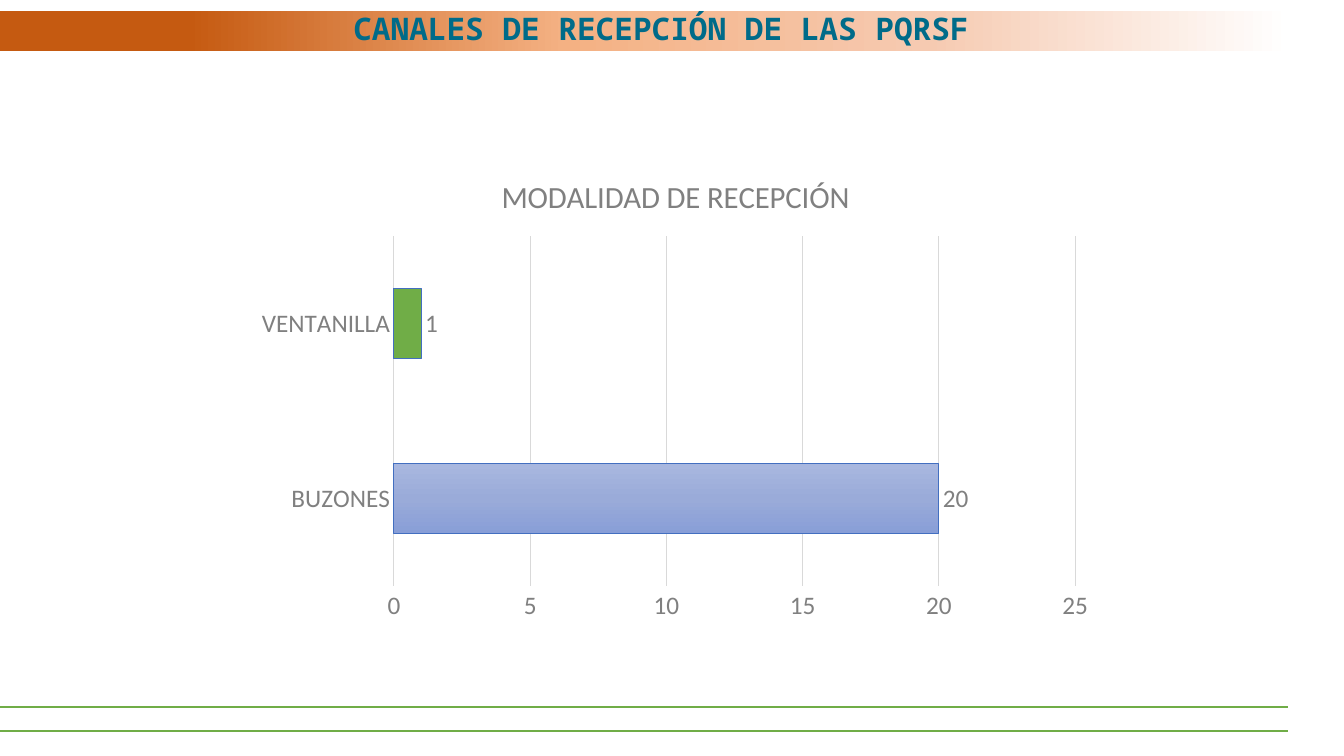
from typing import NamedTuple

from lxml import etree
from pptx import Presentation
from pptx import util as u
from pptx.chart import data as chart_data
from pptx.dml.color import RGBColor
from pptx.enum import chart as ch
from pptx.enum import shapes, text
from pptx.oxml import ns

GREEN, GREY, TEAL = "70AD47", "808080", "006B89"
GRID, BAR_EDGE = "D9D9D9", "436FC0"


class Stop(NamedTuple):
    percent: int
    color: str


class Rule(NamedTuple):
    y: float
    right: float = 12.77


BAND_STOPS = [Stop(14, "C55A11"), Stop(42, "F4B183"), Stop(69, "F6CAB1"), Stop(96, "FFFFFF")]
BAR_STOPS = [Stop(0, "A8B7DF"), Stop(50, "9AABD9"), Stop(100, "889ED7")]
FOOTER_RULES = [Rule(7.25), Rule(7.01)]
PLOT_AREA = {"x": 0.173, "y": 0.171, "w": 0.791, "h": 0.737}


def rgb(color: str) -> RGBColor:
    return RGBColor.from_string(color)


def style_font(font, size: float, color: str, name: str = "Calibri", bold: bool = False) -> None:
    font.size, font.name, font.bold = u.Pt(size), name, bold
    font.color.rgb = rgb(color)


def style_line(line, color: str, width: float) -> None:
    line.color.rgb = rgb(color)
    line.width = u.Pt(width)


def fill_gradient(fill, properties, stops: list[Stop], angle: int) -> None:
    fill.gradient()
    gradient = properties.find(ns.qn("a:gradFill"))
    for child in list(gradient):
        gradient.remove(child)
    stop_list = etree.SubElement(gradient, ns.qn("a:gsLst"))
    for stop in stops:
        entry = etree.SubElement(stop_list, ns.qn("a:gs"), pos=str(stop.percent * 1000))
        etree.SubElement(entry, ns.qn("a:srgbClr"), val=stop.color)
    etree.SubElement(gradient, ns.qn("a:lin"), ang=str(angle * 60000), scaled="0")


def draw_rule(slide, rule: Rule) -> None:
    line = slide.shapes.add_connector(
        shapes.MSO_CONNECTOR.STRAIGHT,
        u.Inches(rule.right), u.Inches(rule.y), u.Inches(0), u.Inches(rule.y),
    )
    style_line(line.line, GREEN, 1.5)
    etree.SubElement(line._element.spPr, ns.qn("a:effectLst"))


def draw_band(slide) -> None:
    band = slide.shapes.add_shape(
        shapes.MSO_SHAPE.RECTANGLE,
        u.Inches(0), u.Inches(0.11), u.Inches(13.33), u.Inches(0.4),
    )
    band.shadow.inherit = False
    band.line.fill.background()
    fill_gradient(band.fill, band._element.spPr, BAND_STOPS, 0)


def draw_heading(slide) -> None:
    heading = slide.shapes.add_textbox(
        u.Inches(0.42), u.Inches(0.11), u.Inches(12.46), u.Inches(0.4)
    )
    frame = heading.text_frame
    frame.word_wrap = True
    frame.vertical_anchor = text.MSO_ANCHOR.MIDDLE
    frame.text = "CANALES DE RECEPCIÓN DE LAS PQRSF "
    paragraph = frame.paragraphs[0]
    paragraph.alignment = text.PP_ALIGN.CENTER
    paragraph.line_spacing = 0.8
    style_font(paragraph.runs[0].font, 22.2, TEAL, "Noto Sans Mono", True)


def place_plot(chart) -> None:
    plot_area = chart._chartSpace.chart.plotArea
    for old in plot_area.findall(ns.qn("c:layout")):
        plot_area.remove(old)
    layout = etree.Element(ns.qn("c:layout"))
    manual = etree.SubElement(layout, ns.qn("c:manualLayout"))
    settings = {"layoutTarget": "inner", "xMode": "edge", "yMode": "edge", **PLOT_AREA}
    for tag, value in settings.items():
        etree.SubElement(manual, ns.qn(f"c:{tag}"), val=str(value))
    plot_area.insert(0, layout)


def draw_channels_chart(slide) -> None:
    channels = chart_data.CategoryChartData()
    channels.categories = ["BUZONES", "VENTANILLA"]
    channels.add_series("Series 1", [20, 1])
    chart = slide.shapes.add_chart(
        ch.XL_CHART_TYPE.BAR_CLUSTERED,
        u.Inches(2.43), u.Inches(1.54), u.Inches(8.54), u.Inches(4.71), channels,
    ).chart
    style_font(chart.font, 18, "000000")
    chart.has_legend = False

    # Chart title
    chart.has_title = True
    title = chart.chart_title
    title.include_in_layout = False
    title.text_frame.text = "MODALIDAD DE RECEPCIÓN"
    style_font(title.text_frame.paragraphs[0].runs[0].font, 22, GREY)

    # Axes
    for axis in (chart.category_axis, chart.value_axis):
        axis.major_tick_mark = axis.minor_tick_mark = ch.XL_TICK_MARK.NONE
        axis.format.line.fill.background()
        style_font(axis.tick_labels.font, 18, GREY)
    values = chart.value_axis
    values.minimum_scale, values.maximum_scale, values.major_unit = 0, 25, 5
    values.has_major_gridlines = True
    style_line(values.major_gridlines.format.line, GRID, 0.75)

    # Bars and their values
    plot = chart.plots[0]
    plot.gap_width = 150
    plot.vary_by_categories = False
    series = plot.series[0]
    series.invert_if_negative = False
    fill_gradient(
        series.format.fill, series._element.find(ns.qn("c:spPr")), BAR_STOPS, 90
    )
    window_bar = series.points[1].format
    window_bar.fill.solid()
    window_bar.fill.fore_color.rgb = rgb(GREEN)
    for bar in (series.format, window_bar):
        style_line(bar.line, BAR_EDGE, 0.75)
    labels = series.data_labels
    labels.show_value = True
    labels.position = ch.XL_LABEL_POSITION.OUTSIDE_END
    style_font(labels.font, 18, GREY)
    place_plot(chart)


def main() -> None:
    deck = Presentation()
    deck.slide_width, deck.slide_height = u.Inches(13.33), u.Inches(7.5)
    slide = deck.slides.add_slide(deck.slide_layouts[6])

    # Header band and footer rules
    draw_band(slide)
    for rule in FOOTER_RULES:
        draw_rule(slide, rule)

    # Content
    draw_heading(slide)
    draw_channels_chart(slide)
    deck.save("out.pptx")


if __name__ == "__main__":
    main()
